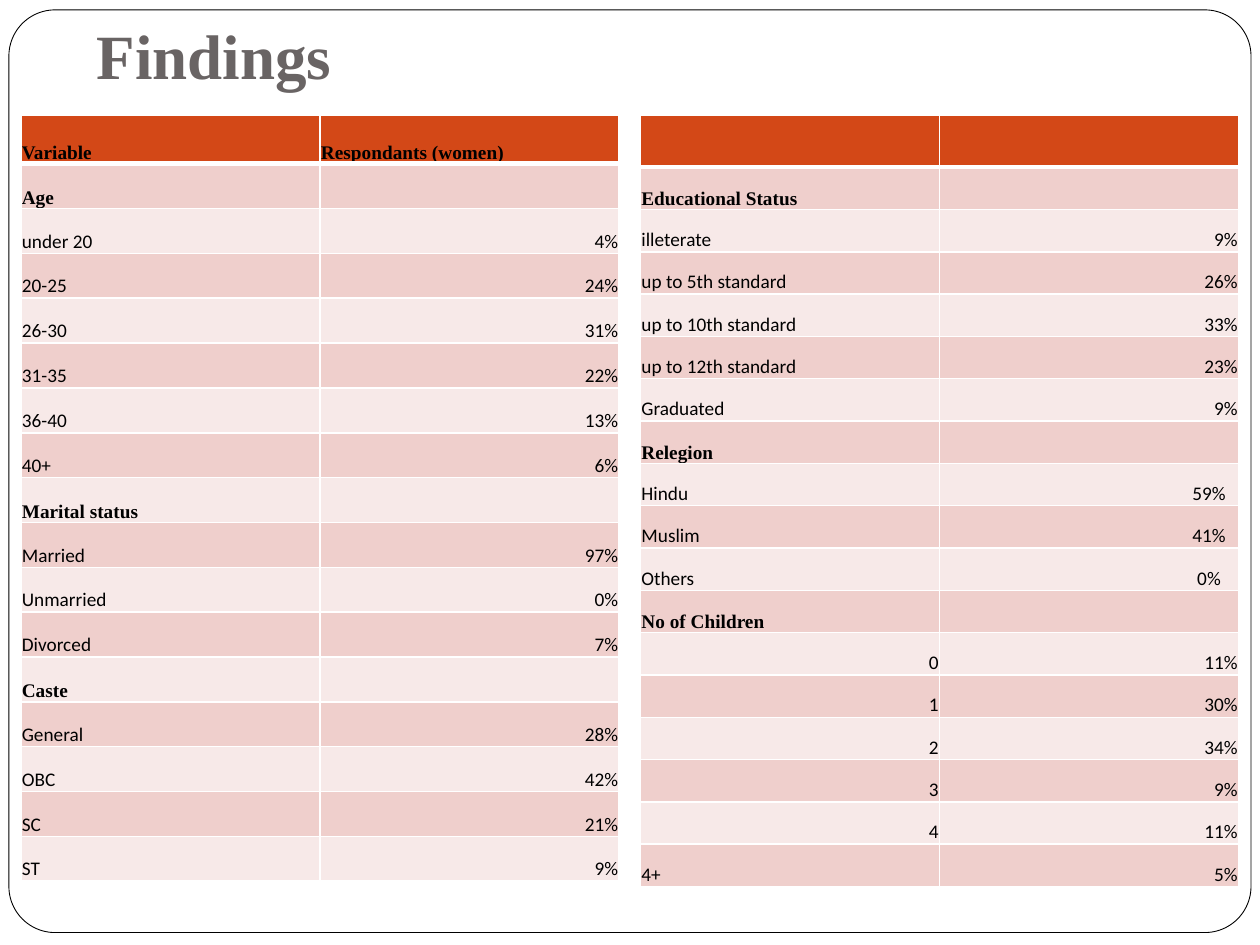
from typing import NamedTuple

from lxml import etree
from pptx import Presentation
from pptx import util as u
from pptx.dml.color import RGBColor
from pptx.enum import shapes, text
from pptx.oxml.ns import qn

WHITE = RGBColor(0xFF, 0xFF, 0xFF)
BLACK = RGBColor(0, 0, 0)
GREY = RGBColor(0x69, 0x64, 0x64)
ORANGE = RGBColor(0xD3, 0x48, 0x17)
BANDS = (RGBColor(0xEF, 0xCF, 0xCC), RGBColor(0xF7, 0xE9, 0xE8))
SERIF, SANS = "Times New Roman", "Calibri"
LEFT, RIGHT = text.PP_ALIGN.LEFT, text.PP_ALIGN.RIGHT
INSET = 0.02


class Row(NamedTuple):
    label: str
    value: str = ""  # a row without a value is a heading
    label_align: text.PP_ALIGN = LEFT
    value_inset: float = INSET


class Panel(NamedTuple):
    left: float
    height: float
    header_height: float
    header: tuple[str, str]
    rows: list[Row]


PANELS = [
    Panel(0.42, 15.45, 0.97, ("Variable", "Respondants (women)"), [
        Row("Age"),
        Row("under 20", "4%"),
        Row("20-25", "24%"),
        Row("26-30", "31%"),
        Row("31-35", "22%"),
        Row("36-40", "13%"),
        Row("40+", "6%"),
        Row("Marital status"),
        Row("Married", "97%"),
        Row("Unmarried", "0%"),
        Row("Divorced", "7%"),
        Row("Caste"),
        Row("General", "28%"),
        Row("OBC", "42%"),
        Row("SC", "21%"),
        Row("ST", "9%"),
    ]),
    Panel(12.91, 15.55, 1.04, ("", ""), [
        Row("Educational Status"),
        Row("illeterate", "9%"),
        Row("up to 5th standard", "26%"),
        Row("up to 10th standard", "33%"),
        Row("up to 12th standard", "23%"),
        Row("Graduated", "9%"),
        Row("Relegion"),
        Row("Hindu", "59%", value_inset=0.26),
        Row("Muslim", "41%", value_inset=0.26),
        Row("Others", "0%", value_inset=0.36),
        Row("No of Children"),
        Row("0", "11%", RIGHT),
        Row("1", "30%", RIGHT),
        Row("2", "34%", RIGHT),
        Row("3", "9%", RIGHT),
        Row("4", "11%", RIGHT),
        Row("4+", "5%"),
    ]),
]


def write(tf, content: str, *, size: float = 11, font: str = SANS,
          bold: bool = False, color: RGBColor = BLACK,
          align: text.PP_ALIGN = LEFT) -> None:
    p = tf.paragraphs[0]
    p.alignment = align
    if content:
        r = p.add_run()
        r.text = content
        r.font.size, r.font.name, r.font.bold = u.Pt(size), font, bold
        r.font.color.rgb = color


def set_borders(cell, bottom: float = 1, top: float = 1) -> None:
    tc_pr = cell._tc.get_or_add_tcPr()
    for side, width in (("L", 1), ("R", 1), ("T", top), ("B", bottom)):
        ln = etree.SubElement(tc_pr, qn(f"a:ln{side}"), w=str(u.Pt(width)))
        fill = etree.SubElement(ln, qn("a:solidFill"))
        etree.SubElement(fill, qn("a:srgbClr"), val=str(WHITE))


def format_cell(cell, fill: RGBColor, right_inset: float = INSET,
                top: float = 1, bottom: float = 1) -> None:
    set_borders(cell, bottom, top)
    cell.fill.solid()
    cell.fill.fore_color.rgb = fill
    cell.vertical_anchor = text.MSO_ANCHOR.BOTTOM
    cell.margin_left = cell.margin_top = u.Cm(INSET)
    cell.margin_right, cell.margin_bottom = u.Cm(right_inset), 0


def draw_panel(slide, panel: Panel) -> None:
    count = len(panel.rows)
    table = slide.shapes.add_table(
        count + 1, 2, u.Cm(panel.left), u.Cm(2.33),
        u.Cm(12.06), u.Cm(panel.height)).table
    table.rows[0].height = u.Cm(panel.header_height)
    for column, caption in enumerate(panel.header):
        cell = table.cell(0, column)
        format_cell(cell, ORANGE, bottom=3)
        write(cell.text_frame, caption, font=SERIF, bold=True)

    row_height = u.Cm((panel.height - panel.header_height) / count)
    for i, row in enumerate(panel.rows, start=1):
        table.rows[i].height = row_height
        label, value = table.cell(i, 0), table.cell(i, 1)
        band = BANDS[(i - 1) % 2]
        top = 3 if i == 1 else 1
        format_cell(label, band, top=top)
        format_cell(value, band, row.value_inset, top=top)
        heading = not row.value
        write(label.text_frame, row.label, font=SERIF if heading else SANS,
              bold=heading, align=row.label_align)
        write(value.text_frame, row.value, align=RIGHT)


def main() -> None:
    prs = Presentation()
    prs.slide_width, prs.slide_height = u.Cm(25.4), u.Cm(19.05)
    s = prs.slides.add_slide(prs.slide_layouts[5])

    # Title
    title = s.shapes.title
    title.left, title.top = u.Cm(1.7), u.Cm(0.64)
    title.width, title.height = u.Cm(22.66), u.Cm(1.47)
    tf = title.text_frame
    tf.auto_size = text.MSO_AUTO_SIZE.NONE
    tf.vertical_anchor = text.MSO_ANCHOR.BOTTOM
    tf.margin_bottom = u.Cm(0.25)
    write(tf, "Findings", size=36, font=SERIF, bold=True, color=GREY)

    # Rounded frame behind everything
    frame = s.shapes.add_shape(
        shapes.MSO_SHAPE.ROUNDED_RECTANGLE,
        u.Cm(0.18), u.Cm(0.2), u.Cm(25.04), u.Cm(18.6))
    frame.adjustments[0] = 0.05
    frame.shadow.inherit = False
    frame.fill.solid()
    frame.fill.fore_color.rgb = WHITE
    frame.line.color.rgb = BLACK
    frame.line.width = u.Pt(0.5)
    title.element.addprevious(frame.element)

    # Tables
    for panel in PANELS:
        draw_panel(s, panel)

    prs.save("out.pptx")


if __name__ == "__main__":
    main()
